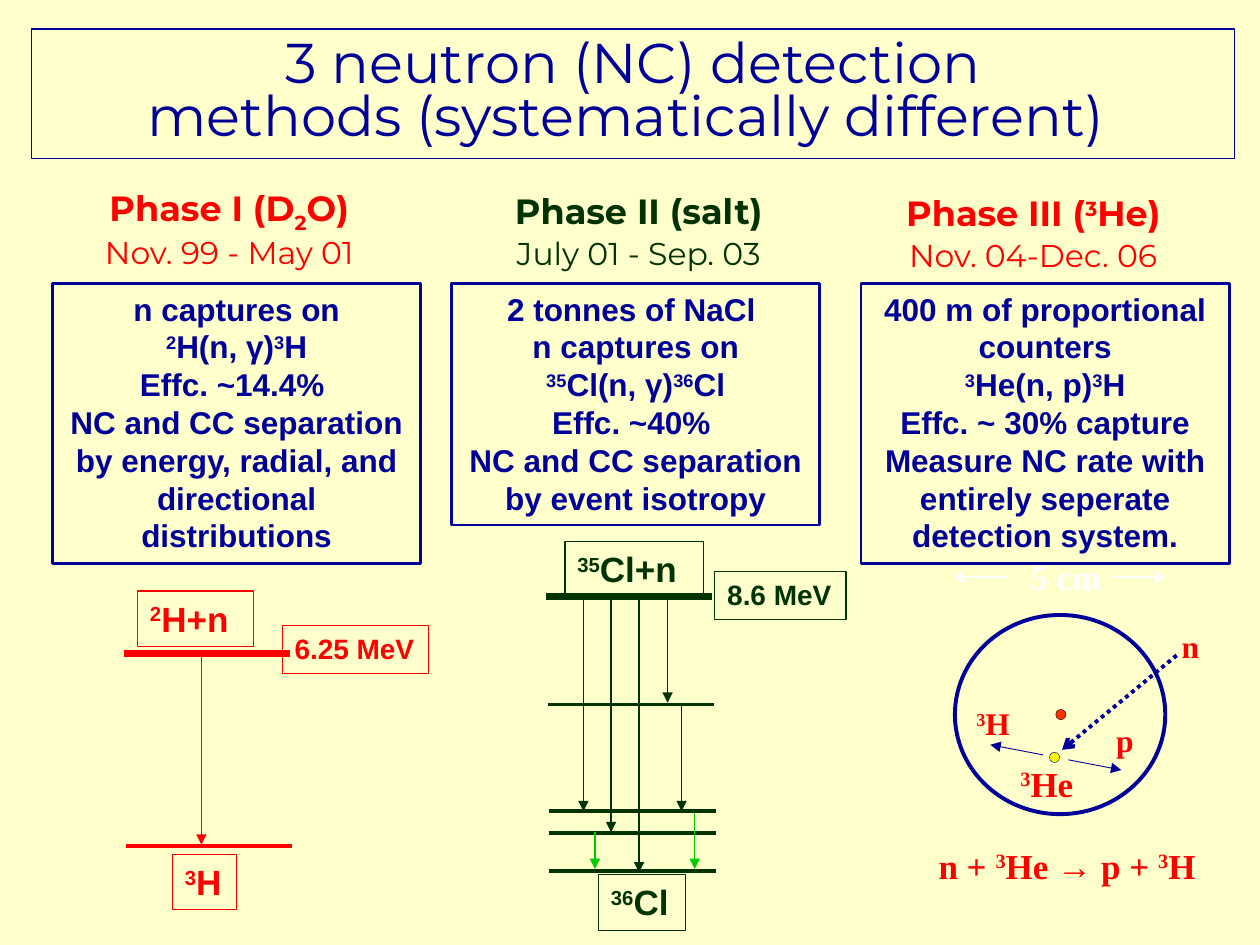
import pptx
import pptx.util
from pptx.dml.color import RGBColor
from pptx.enum.dml import MSO_LINE
from pptx.enum.shapes import MSO_CONNECTOR, MSO_SHAPE
from pptx.enum.text import MSO_ANCHOR, MSO_AUTO_SIZE, PP_ALIGN
from pptx.oxml.ns import qn
from lxml import etree

Pt = pptx.util.Pt
COLORS = {
    "background": "FFFFCC", "navy": "000099", "red": "FF0000", "forest": "003300",
    "green": "00CC00", "white": "FFFFFF", "black": "000000",
    "wire": "FF3300", "yellow": "FFFF00",
}
BASELINES = {"^": "30000", "_": "-25000"}


def rgb(name):
    return RGBColor.from_string(COLORS[name])


def style_line(line, color, width):
    line.color.rgb = rgb(color)
    line.width = Pt(width)


def write_paragraph(paragraph, text, size, font, color, bold=True, align=None):
    """Write text in which ^3^ is superscript and _2_ is subscript."""
    piece, mark = "", None
    for char in text + "\0":
        if char not in BASELINES and char != "\0":
            piece += char
            continue
        if piece:
            run = paragraph.add_run()
            run.text = piece
            if mark:
                run.font._element.set("baseline", BASELINES[mark])
        piece, mark = "", None if mark else char
    paragraph.alignment = align
    paragraph.font.size, paragraph.font.name = Pt(size), font
    paragraph.font.bold, paragraph.font.color.rgb = bold, rgb(color)


def add_label(slide, box, text, size, font, color, border=False):
    label = slide.shapes.add_textbox(*map(Pt, box))
    label.text_frame.word_wrap = False
    label.text_frame.auto_size = MSO_AUTO_SIZE.SHAPE_TO_FIT_TEXT
    write_paragraph(label.text_frame.paragraphs[0], text, size, font, color)
    if border:
        style_line(label.line, color, 0.75)


def add_line(slide, start, end, color, width, arrow=None):
    connector = slide.shapes.add_connector(MSO_CONNECTOR.STRAIGHT, *map(Pt, (*start, *end)))
    style_line(connector.line, color, width)
    etree.SubElement(connector._element.spPr, qn("a:effectLst"))
    if arrow:
        line_xml = connector.line._get_or_add_ln()
        etree.SubElement(line_xml, qn("a:tailEnd"), type=arrow)
    return connector


def add_ellipse(slide, box, color, width, fill=None):
    ellipse = slide.shapes.add_shape(MSO_SHAPE.OVAL, *map(Pt, box))
    ellipse.shadow.inherit = False
    style_line(ellipse.line, color, width)
    if fill:
        ellipse.fill.solid()
        ellipse.fill.fore_color.rgb = rgb(fill)
    else:
        ellipse.fill.background()


def add_title(slide, box, text):
    title = slide.shapes.title
    title.left, title.top, title.width, title.height = map(Pt, box)
    style_line(title.line, "navy", 0.75)
    frame = title.text_frame
    frame.text = text
    frame.auto_size = MSO_AUTO_SIZE.NONE
    frame.vertical_anchor = MSO_ANCHOR.MIDDLE
    paragraph = frame.paragraphs[0]
    paragraph.alignment, paragraph.line_spacing = PP_ALIGN.CENTER, 0.8
    paragraph.font.size, paragraph.font.name = Pt(32), "Montserrat"
    paragraph.font.color.rgb = rgb("navy")


def add_heading(slide, box, phase, dates, color):
    frame = slide.shapes.add_textbox(*map(Pt, box)).text_frame
    frame.word_wrap = True
    for paragraph, text, size, bold in (
        (frame.paragraphs[0], phase, 20, True),
        (frame.add_paragraph(), dates, 18, False),
    ):
        write_paragraph(paragraph, text, size, "Montserrat", color, bold, PP_ALIGN.CENTER)
        paragraph.line_spacing, paragraph.space_before = 0.9, Pt(size * 0.2)


def add_summary(slide, box, facts):
    summary = slide.shapes.add_textbox(*map(Pt, box))
    style_line(summary.line, "navy", 1.5)
    frame = summary.text_frame
    frame.word_wrap = True
    for i, fact in enumerate(facts):
        paragraph = frame.add_paragraph() if i else frame.paragraphs[0]
        write_paragraph(paragraph, fact, 18, "Arial", "navy", True, PP_ALIGN.CENTER)


def add_decay_scheme(slide, origin, color, levels, decays, labels):
    """Draw energy levels (x, y, width), decays (x, top, bottom, colour) and labels."""
    left, top = origin
    for x, y, width in levels:
        add_line(slide, (left + x, top + y), (left + x + 95, top + y), color, width)
    for x, y, w, h, text, size in labels:
        add_label(slide, (left + x, top + y, w, h), text, size, "Arial", color, border=True)
    for x, start, end, decay_color in decays:
        add_line(slide, (left + x, top + start), (left + x, top + end),
                 decay_color, 0.75, "triangle")


def add_counter(slide, origin):
    """Draw the cross-section of a proportional counter and its reaction."""
    left, top = origin

    def at(x, y):
        return left + x, top + y

    add_ellipse(slide, (*at(0.7, 37.4), 120.2, 113.8), "navy", 2.25)
    add_ellipse(slide, (*at(58.3, 91.4), 5.8, 5.8), "black", 0.25, "wire")
    for start, end in (((65.5, 120.2), (95.8, 126)), ((51.1, 117.4), (20.9, 111.6))):
        add_line(slide, at(*start), at(*end), "navy", 0.5, "triangle")
    neutron = add_line(slide, at(127.4, 60.5), at(61.9, 114.5), "navy", 2.25, "arrow")
    neutron.line.dash_style = MSO_LINE.ROUND_DOT
    for inner, outer in ((30.2, 0), (90.7, 121)):
        add_line(slide, at(inner, 15.8), at(outer, 15.8), "white", 1.5, "arrow")
    for x, y, w, h, text, size, color in (
        (36.7, 0, 62, 31, "5 cm", 20, "white"),
        (123.1, 41, 24.5, 29, "n", 18, "red"),
        (85.7, 94.3, 24.5, 29, "p", 18, "red"),
        (5.8, 85, 34.6, 29, "^3^H", 18, "red"),
        (31, 118, 45.4, 31, "^3^He", 20, "red"),
        (-15.8, 164.9, 162, 31, "n + ^3^He → p + ^3^H", 20, "red"),
    ):
        add_label(slide, (*at(x, y), w, h), text, size, "Times New Roman", color)
    add_ellipse(slide, (*at(54.7, 115.9), 5.8, 5.8), "navy", 0.25, "yellow")


def main():
    deck = pptx.Presentation()
    deck.slide_width, deck.slide_height = Pt(720), Pt(540)
    slide = deck.slides.add_slide(deck.slide_layouts[5])
    slide.background.fill.solid()
    slide.background.fill.fore_color.rgb = rgb("background")

    add_title(slide, (18, 16.5, 687.6, 74.2),
              "3 neutron (NC) detection\vmethods (systematically different) ")

    add_heading(slide, (18, 103.7, 226, 56), "Phase I (D_2_O)", "Nov. 99 - May 01", "red")
    add_heading(slide, (252, 107.3, 226, 56), "Phase II (salt)", "July 01 - Sep. 03", "forest")
    add_heading(slide, (473.8, 108.7, 233.3, 56), "Phase III (^3^He)", "Nov. 04-Dec. 06", "red")

    add_summary(slide, (30, 162, 210.5, 160), (
        "n captures on", "^2^H(n, γ)^3^H", "Effc. ~14.4% ",
        "NC and CC separation by energy, radial, and directional distributions"))
    add_summary(slide, (258, 162, 210.5, 138), (
        "2 tonnes of NaCl ", "n captures on", "^35^Cl(n, γ)^36^Cl", "Effc. ~40% ",
        "NC and CC separation by event isotropy"))
    add_summary(slide, (492, 162, 210.5, 160), (
        "400 m of proportional counters", "^3^He(n, p)^3^H", "Effc. ~ 30% capture",
        "Measure NC rate with entirely seperate detection system."))

    add_decay_scheme(
        slide, (70.6, 337.7), "red",
        levels=((0, 36, 4), (1.4, 146, 2.25)),
        decays=((44.5, 36, 145, "red"),),
        labels=((8, 0, 66.2, 31.7, "^2^H+n", 20), (90.7, 19.6, 83.5, 27.4, "6.25 MeV", 16),
                (28, 150.5, 36.7, 31.7, "^3^H", 20)))
    add_decay_scheme(
        slide, (312, 309.6), "forest",
        levels=((0, 31, 4), (1, 93, 2.25), (2, 154, 2.25), (2, 166.5, 2.25), (2, 188, 2.25)),
        decays=((21.4, 31, 154, "forest"), (37.2, 31, 166, "forest"), (53.2, 31, 189, "forest"),
                (69.5, 31, 92, "forest"), (77.5, 93, 154, "forest"),
                (85, 155, 187, "green"), (28, 166, 187, "green")),
        labels=((10.8, 0, 79.2, 31.7, "^35^Cl+n", 20), (96.5, 17, 75, 27.4, "8.6 MeV", 16),
                (30, 190.3, 49.7, 31.7, "^36^Cl", 20)))
    add_counter(slide, (545, 314))

    deck.save("out.pptx")


if __name__ == "__main__":
    main()
